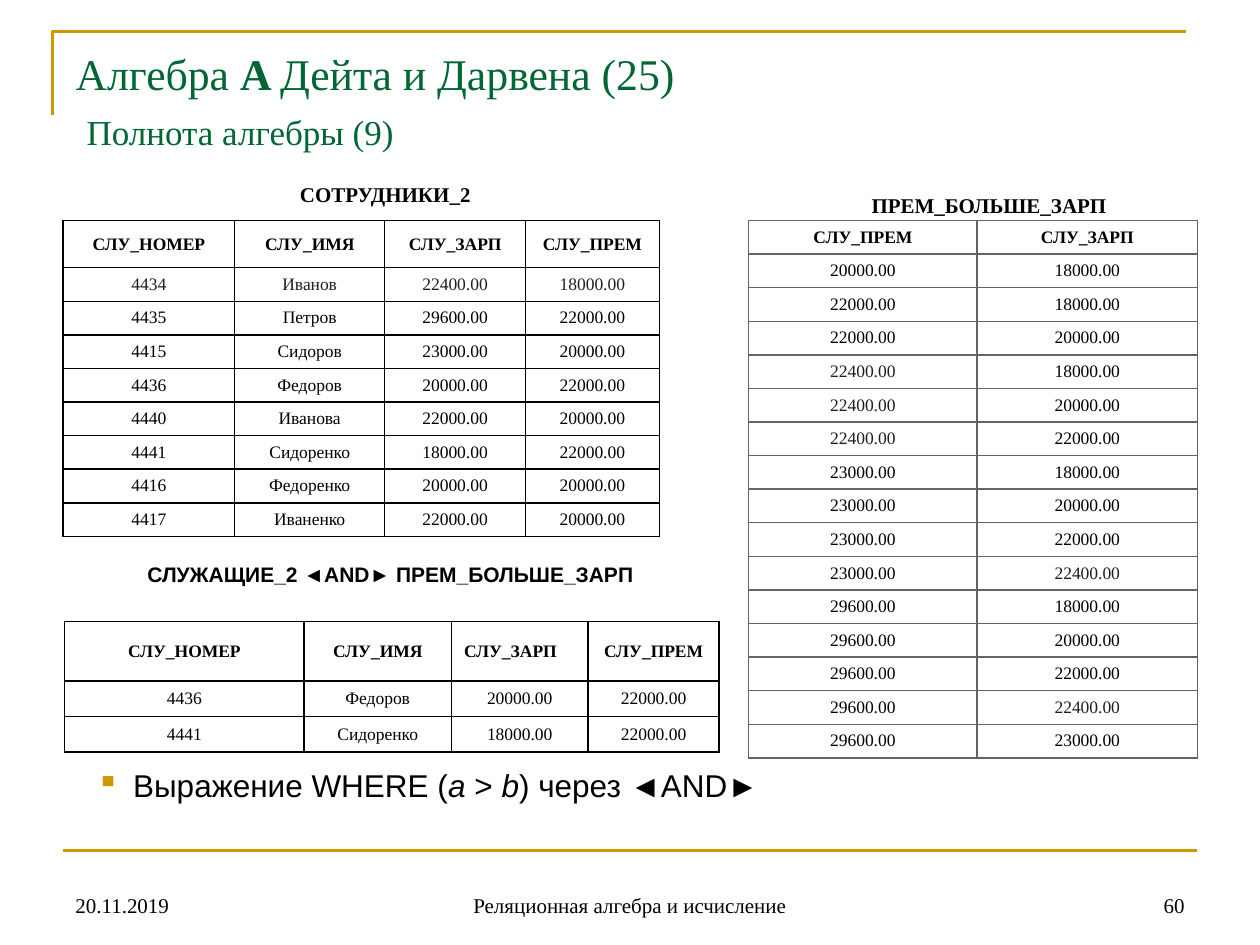
import dataclasses

import lxml.etree
import pptx
import pptx.dml.color
import pptx.enum.shapes
import pptx.enum.text
import pptx.oxml.ns
import pptx.util

COLS, ROWS = 120, 90
SLIDE_W, SLIDE_H = pptx.util.Inches(10), pptx.util.Inches(7.5)
ALIGN = pptx.enum.text.PP_ALIGN
ANCHOR = pptx.enum.text.MSO_ANCHOR


@dataclasses.dataclass(frozen=True)
class Theme:
    """Colours, fonts and type sizes of the slide."""
    ink: str = "000000"
    soft_ink: str = "221E1F"
    paper: str = "FFFFFF"
    gold: str = "CC9900"
    green: str = "006633"
    grey: str = "646464"
    serif: str = "Times New Roman"
    sans: str = "Arial"
    title: float = 25
    subtitle: float = 20
    body: float = 18
    label: float = 12
    cell: float = 10
    rule: float = 1.5
    border: float = 1


THEME = Theme()


def col(n):
    """Convert grid columns to a length."""
    return round(SLIDE_W * n / COLS)


def row(n):
    """Convert grid rows to a length."""
    return round(SLIDE_H * n / ROWS)


def place(box):
    """Convert a grid box to left, top, width and height."""
    x, y, w, h = box
    return col(x), row(y), col(w), row(h)


def rgb(colour):
    """Turn a hex string into a colour."""
    return pptx.dml.color.RGBColor.from_string(colour)


def add_xml(parent, tag, **attributes):
    """Append a DrawingML element to its parent."""
    child = lxml.etree.SubElement(parent, pptx.oxml.ns.qn(tag))
    for name, value in attributes.items():
        child.set(name, str(value))
    return child


def write(p, text, font=THEME.serif, size=THEME.label, colour=THEME.ink,
          bold=False, italic=False, align=None):
    """Add one formatted run to a paragraph."""
    if align is not None:
        p.alignment = align
    r = p.add_run()
    r.text = text
    r.font.name, r.font.size = font, pptx.util.Pt(size)
    r.font.bold, r.font.italic = bold, italic
    r.font.color.rgb = rgb(colour)


def add_paragraph_box(s, box, anchor=ANCHOR.TOP):
    """Add a wrapping text box and return its paragraph."""
    tf = s.shapes.add_textbox(*place(box)).text_frame
    tf.word_wrap, tf.vertical_anchor = True, anchor
    return tf.paragraphs[0]


def hang(p, indent):
    """Give a paragraph a hanging indent."""
    properties = p._p.get_or_add_pPr()
    properties.set("marL", str(indent))
    properties.set("indent", str(-indent))
    return properties


def frame(s, corner, base):
    """Draw the open corner at the top and the rule at the bottom."""
    x, y, w, h = place(corner)
    builder = s.shapes.build_freeform(x, y + h, scale=1.0)
    builder.add_line_segments([(x, y), (x + w, y)], close=False)
    outline = builder.convert_to_shape()
    outline.shadow.inherit = False
    outline.fill.background()
    x, y, w, h = place(base)
    rule = s.shapes.add_connector(
        pptx.enum.shapes.MSO_CONNECTOR.STRAIGHT, x, y, x + w, y + h)
    for sp in (outline, rule):
        sp.line.color.rgb, sp.line.width = rgb(THEME.gold), pptx.util.Pt(THEME.rule)
    add_xml(rule._element.spPr, "a:effectLst")


def heading(s, box):
    """Fill the title placeholder with the title and its subtitle."""
    title = s.shapes.title
    title.left, title.top, title.width, title.height = place(box)
    tf = title.text_frame
    tf.word_wrap, tf.vertical_anchor = True, ANCHOR.TOP
    tf.auto_size = pptx.enum.text.MSO_AUTO_SIZE.NONE
    p = tf.paragraphs[0]
    p.line_spacing = 1.05
    style = dict(size=THEME.title, colour=THEME.green, align=ALIGN.LEFT)
    write(p, "Алгебра ", **style)
    write(p, "A ", bold=True, **style)
    write(p, "Дейта и Дарвена (25)", **style)
    p.add_line_break()
    write(p, " ", **style)
    write(p, "Полнота алгебры (9)", size=THEME.subtitle, colour=THEME.green)


def caption(s, box, text, font=THEME.serif):
    """Add the bold centred name of a relation."""
    write(add_paragraph_box(s, box), text, font=font, bold=True, align=ALIGN.CENTER)


def set_borders(cell, colour):
    """Draw all four borders of a cell."""
    properties = cell._tc.get_or_add_tcPr()
    for position, side in enumerate(("a:lnL", "a:lnR", "a:lnT", "a:lnB")):
        line = add_xml(properties, side, w=pptx.util.Pt(THEME.border))
        add_xml(add_xml(line, "a:solidFill"), "a:srgbClr", val=colour)
        properties.insert(position, line)


def relation(s, corner, widths, header_height, row_height, records,
             border=THEME.ink, is_soft=lambda i, text: False, left_headers=()):
    """Add a table with a bold header row and centred values."""
    heights = [header_height] + [row_height] * (len(records) - 1)
    table = s.shapes.add_table(
        len(records), len(widths),
        *place((*corner, sum(widths), sum(heights)))).table
    table.first_row = table.horz_banding = False
    for column, width in zip(table.columns, widths):
        column.width = col(width)
    for i, (record, height) in enumerate(zip(records, heights)):
        table.rows[i].height = row(height)
        for j, text in enumerate(record):
            cell = table.cell(i, j)
            cell.fill.solid()
            cell.fill.fore_color.rgb = rgb(THEME.paper)
            cell.vertical_anchor = ANCHOR.MIDDLE
            set_borders(cell, border)
            p = cell.text_frame.paragraphs[0]
            hang(p, col(4.5))
            write(p, text, size=THEME.cell, bold=i == 0,
                  colour=THEME.soft_ink if is_soft(i, text) else THEME.ink,
                  align=ALIGN.LEFT if i == 0 and text in left_headers else ALIGN.CENTER)


def conclusion(s, box):
    """Add the bulleted statement below the tables."""
    p = add_paragraph_box(s, box)
    properties = hang(p, col(3.5))
    add_xml(add_xml(properties, "a:buClr"), "a:srgbClr", val=THEME.gold)
    add_xml(properties, "a:buChar", char="▪")
    for text, italic in (("Выражение WHERE (", False), ("a ", True), ("> ", False),
                         ("b", True), (") через ◄AND►", False)):
        write(p, text, font=THEME.sans, size=THEME.body, italic=italic)


def footer(s, box):
    """Add the date, the lecture name and the page number."""
    x, y, w, h = box
    for text, left, width, align in (
            ("20.11.2019", x, 28, ALIGN.LEFT),
            ("Реляционная алгебра и исчисление", x + 35, 38, ALIGN.CENTER),
            ("60", x + w - 28, 28, ALIGN.RIGHT)):
        write(add_paragraph_box(s, (left, y, width, h), ANCHOR.BOTTOM), text, align=align)


def main():
    """Build the slide and save it."""
    prs = pptx.Presentation()
    prs.slide_width, prs.slide_height = SLIDE_W, SLIDE_H
    s = prs.slides.add_slide(prs.slide_layouts[5])
    header = ("СЛУ_НОМЕР", "СЛУ_ИМЯ", "СЛУ_ЗАРП", "СЛУ_ПРЕМ")
    employees = [
        ("4434", "Иванов", "22400.00", "18000.00"),
        ("4435", "Петров", "29600.00", "22000.00"),
        ("4415", "Сидоров", "23000.00", "20000.00"),
        ("4436", "Федоров", "20000.00", "22000.00"),
        ("4440", "Иванова", "22000.00", "20000.00"),
        ("4441", "Сидоренко", "18000.00", "22000.00"),
        ("4416", "Федоренко", "20000.00", "20000.00"),
        ("4417", "Иваненко", "22000.00", "20000.00"),
    ]
    amounts = sorted({employee[2] for employee in employees})
    pairs = [(high, low) for high in amounts for low in amounts if low < high]
    matches = [employee for employee in employees if (employee[3], employee[2]) in pairs]

    frame(s, (5, 3, 108, 8), (6, 81, 108, 0))
    heading(s, (6, 3.6, 108, 15))
    relation(s, (6, 21), (16.35, 14.3, 13.4, 12.75), 4.5, 3.2,
             [header] + employees, is_soft=lambda i, text: i == 1)
    relation(s, (71.3, 21), (21.75, 21), 3.2, 3.2, [header[:1:-1]] + pairs,
             border=THEME.grey, is_soft=lambda i, text: text == "22400.00")
    caption(s, (3.2, 16.7, 67, 3.6), "СОТРУДНИКИ_2")
    caption(s, (72.2, 17.7, 44, 3.6), "ПРЕМ_БОЛЬШЕ_ЗАРП")
    caption(s, (3.2, 52.9, 68, 4.8), "СЛУЖАЩИЕ_2 ◄AND► ПРЕМ_БОЛЬШЕ_ЗАРП", THEME.sans)
    conclusion(s, (8, 72.4, 68, 4.8))
    relation(s, (6.15, 59.2), (22.8, 14.05, 13, 12.5), 5.65, 3.4,
             [header] + matches, left_headers=("СЛУ_ЗАРП",))
    footer(s, (6, 82, 108, 6))
    prs.save("out.pptx")


if __name__ == "__main__":
    main()
